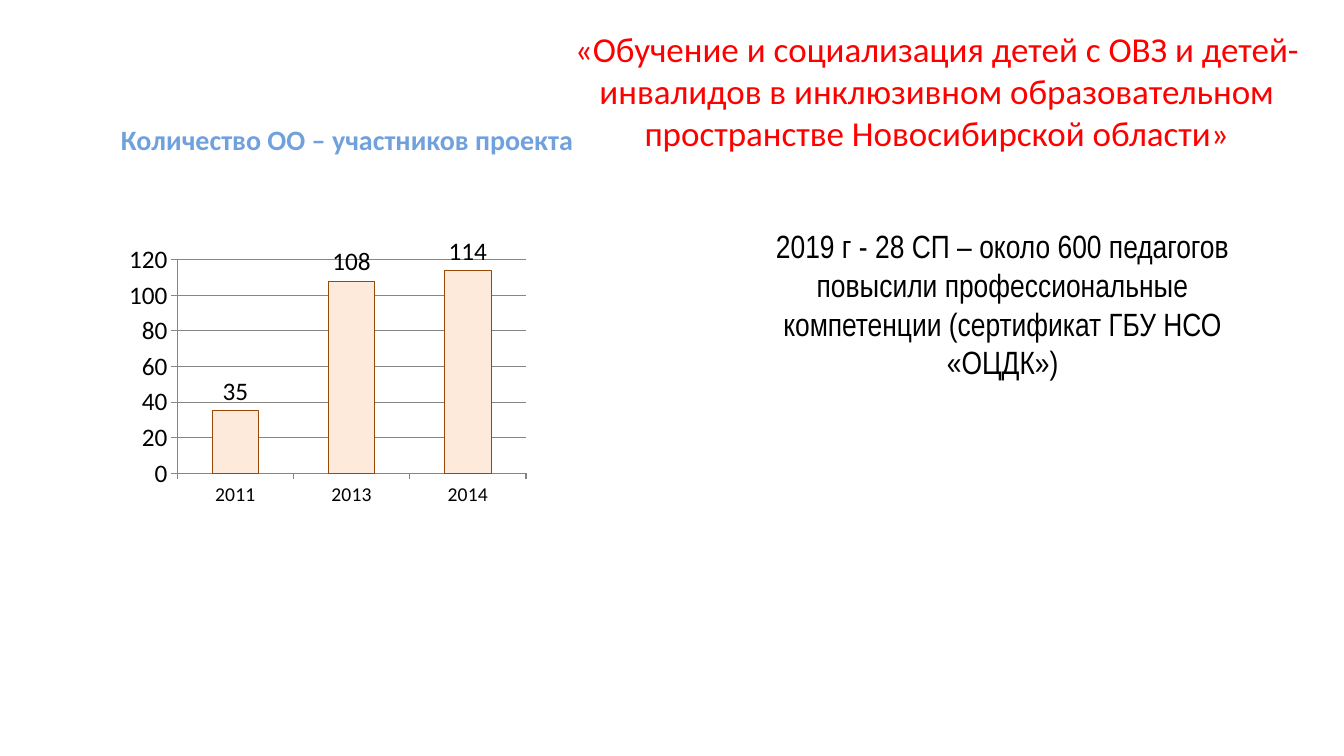
from dataclasses import dataclass

from lxml import etree
from pptx import Presentation
from pptx.chart.chart import Chart
from pptx.chart.data import CategoryChartData
from pptx.dml.color import RGBColor
from pptx.enum.chart import XL_CHART_TYPE, XL_LABEL_POSITION, XL_TICK_MARK
from pptx.enum.text import MSO_ANCHOR, MSO_AUTO_SIZE, PP_ALIGN
from pptx.oxml.ns import qn
from pptx.util import Inches, Pt

COLUMN_CLUSTERED = XL_CHART_TYPE.COLUMN_CLUSTERED
OUTSIDE_END = XL_LABEL_POSITION.OUTSIDE_END
TICK_OUTSIDE, TICK_NONE = XL_TICK_MARK.OUTSIDE, XL_TICK_MARK.NONE
TOP = MSO_ANCHOR.TOP
NO_AUTO_SIZE = MSO_AUTO_SIZE.NONE
LEFT, CENTER = PP_ALIGN.LEFT, PP_ALIGN.CENTER

TITLE_ONLY_LAYOUT = 5
COLORS = {
    "heading": "FF0000",
    "caption": "71A1DC",
    "text": "000000",
    "series": "4F81BD",
    "column": "FDEADA",
    "column_line": "984807",
    "axis": "868686",
}
PARTICIPANTS = {"2011": 35, "2013": 108, "2014": 114}
PLOT_LAYOUT = {"x": 0.176, "y": 0.085, "w": 0.508, "h": 0.463}


@dataclass
class TextBlock:
    text: str
    box: tuple[float, float, float, float]
    font: str
    size: int
    color: str
    bold: bool = False
    alignment: PP_ALIGN = CENTER
    wrap: bool = True
    is_title: bool = False


TEXT_BLOCKS = [
    TextBlock("Количество ОО – участников проекта", (1.09, 1.16, 4.86, 0.31),
              "Calibri", 20, "caption", bold=True, alignment=LEFT, wrap=False),
    TextBlock("2019 г - 28 СП – около 600 педагогов повысили профессиональные "
              "компетенции (сертификат ГБУ НСО «ОЦДК»)",
              (7.37, 2.19, 5.15, 1.66), "Arial Narrow", 23, "text"),
    TextBlock("«Обучение и социализация детей с ОВЗ и детей-инвалидов в инклюзивном "
              "образовательном пространстве Новосибирской области»",
              (5.5, 0.21, 7.58, 1.44), "Calibri", 25, "heading", is_title=True),
]


def color(name: str) -> RGBColor:
    return RGBColor.from_string(COLORS[name])


def add_text(slide, block: TextBlock) -> None:
    box = [Inches(length) for length in block.box]
    if block.is_title:
        shape = slide.shapes.title
        shape.left, shape.top, shape.width, shape.height = box
    else:
        shape = slide.shapes.add_textbox(*box)
    frame = shape.text_frame
    frame.word_wrap = block.wrap
    frame.auto_size = NO_AUTO_SIZE
    frame.vertical_anchor = TOP
    frame.margin_left = frame.margin_right = Inches(0.11)
    frame.margin_top = frame.margin_bottom = Inches(0.06)
    frame.text = block.text
    paragraph = frame.paragraphs[0]
    paragraph.alignment = block.alignment
    font = paragraph.font
    font.name, font.size, font.bold = block.font, Pt(block.size), block.bold
    font.color.rgb = color(block.color)


def set_plot_layout(chart: Chart) -> None:
    """Fix the inner plot area as fractions of the chart frame."""
    plot_area = chart.plots[0]._element.getparent()
    layout = plot_area.find(qn("c:layout"))
    if layout is None:
        layout = etree.Element(qn("c:layout"))
        plot_area.insert(0, layout)
    manual = etree.SubElement(layout, qn("c:manualLayout"))
    settings = {"layoutTarget": "inner", "xMode": "edge", "yMode": "edge", **PLOT_LAYOUT}
    for tag, value in settings.items():
        etree.SubElement(manual, qn(f"c:{tag}")).set("val", str(value))


def style_axes(chart: Chart) -> None:
    value_axis, category_axis = chart.value_axis, chart.category_axis
    value_axis.minimum_scale, value_axis.maximum_scale = 0, 120
    value_axis.major_unit = 20
    value_axis.has_major_gridlines = True
    category_axis.tick_labels.font.size = Pt(14)
    for axis in (value_axis, category_axis):
        axis.major_tick_mark, axis.minor_tick_mark = TICK_OUTSIDE, TICK_NONE
    for line in (value_axis.format.line, category_axis.format.line,
                 value_axis.major_gridlines.format.line):
        line.color.rgb = color("axis")
        line.width = Pt(0.75)


def add_participants_chart(slide) -> None:
    data = CategoryChartData()
    data.categories = list(PARTICIPANTS)
    data.add_series("Series 1", list(PARTICIPANTS.values()))
    chart = slide.shapes.add_chart(COLUMN_CLUSTERED, Inches(0.56), Inches(2.19),
                                   Inches(6.81), Inches(4.57), data).chart
    chart.has_legend = chart.has_title = False
    chart.font.name, chart.font.size = "Calibri", Pt(18)
    chart.font.color.rgb = color("text")
    set_plot_layout(chart)
    style_axes(chart)

    plot = chart.plots[0]
    plot.gap_width = 150
    plot.vary_by_categories = False
    series = plot.series[0]
    series.format.fill.solid()
    series.format.fill.fore_color.rgb = color("series")
    for index in range(len(PARTICIPANTS)):
        column = series.points[index].format
        column.fill.solid()
        column.fill.fore_color.rgb = color("column")
        column.line.color.rgb = color("column_line")
        column.line.width = Pt(0.75)
    labels = series.data_labels
    labels.show_value = True
    labels.position = OUTSIDE_END


def main() -> None:
    presentation = Presentation()
    presentation.slide_width, presentation.slide_height = Inches(13.33), Inches(7.5)
    slide = presentation.slides.add_slide(presentation.slide_layouts[TITLE_ONLY_LAYOUT])
    add_participants_chart(slide)
    for block in TEXT_BLOCKS:
        add_text(slide, block)
    presentation.save("out.pptx")


if __name__ == "__main__":
    main()
